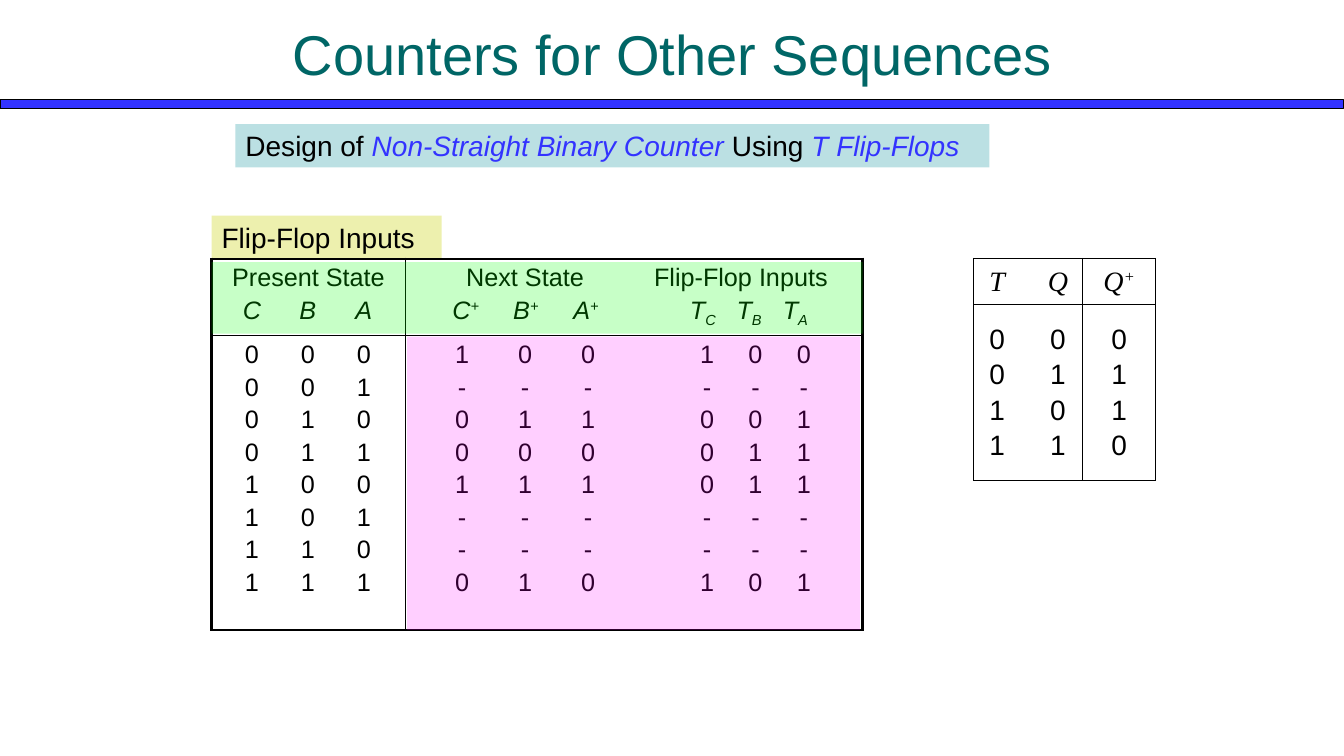
from lxml import etree
from pptx import Presentation
from pptx import util as u
from pptx.dml.color import RGBColor
from pptx.enum import shapes, text
from pptx.oxml.ns import qn

Pt = u.Pt
BLACK, BLUE, TEAL = "000000", "3333FF", "006666"
UP, DOWN = 30000, -25000

# Centres of the value columns, measured from the cell's text edge
STATE_STOPS = [21.5 + 40 * i for i in range(3)]
GROUP_STOPS = [78.4, 232.6]
NEXT_HEAD_STOPS = [36 + 43 * i for i in range(3)] + [205.5 + 33 * i for i in range(3)]
NEXT_STOPS = [33.4 + 45 * i for i in range(3)] + [208.4 + 34.6 * i for i in range(3)]
T_STOPS = [9.5, 53]

PRESENT = [f"{n:03b}" for n in range(8)]
NEXT_AND_INPUTS = ["100100", "------", "011001", "000011",
                   "111011", "------", "------", "010101"]


def color(hex_string):
    return RGBColor.from_string(hex_string)


def add_span(para, words, size, ink=BLACK, italic=False, baseline=0, font="Arial"):
    span = para.add_run()
    span.text = words
    span.font.name, span.font.size = font, Pt(size)
    span.font.italic = italic
    span.font.color.rgb = color(ink)
    if baseline:
        span._r.get_or_add_rPr().set("baseline", str(baseline))


def add_rect(page, left, top, width, height, fill, alpha=None, line=None):
    box = page.shapes.add_shape(shapes.MSO_SHAPE.RECTANGLE,
                                Pt(left), Pt(top), Pt(width), Pt(height))
    box.shadow.inherit = False
    box.fill.solid()
    box.fill.fore_color.rgb = color(fill)
    if alpha:
        tint = box.fill._xPr.find(".//" + qn("a:srgbClr"))
        etree.SubElement(tint, qn("a:alpha"), val=str(alpha * 1000))
    if line:
        box.line.color.rgb = color(line)
        box.line.width = Pt(0.75)
    else:
        box.line.fill.background()
    return box


def add_label(page, left, top, width, height, fill, spans):
    """Coloured rectangle with left-aligned (words, ink, italic) spans."""
    frame = add_rect(page, left, top, width, height, fill).text_frame
    frame.word_wrap = True
    frame.vertical_anchor = text.MSO_ANCHOR.TOP
    para = frame.paragraphs[0]
    para.alignment = text.PP_ALIGN.LEFT
    for words, ink, italic in spans:
        add_span(para, words, 20, ink, italic)


def add_title(page, words):
    box = page.shapes.add_textbox(Pt(156.24), Pt(9.36), Pt(648), Pt(57.6))
    box.text_frame.word_wrap = True
    box.text_frame.vertical_anchor = text.MSO_ANCHOR.MIDDLE
    para = box.text_frame.paragraphs[0]
    para.alignment = text.PP_ALIGN.CENTER
    add_span(para, words, 40, TEAL)


def add_borders(cell, widths):
    """Draw left, right, top and bottom borders of the given widths."""
    for side, width in zip("LRTB", widths):
        line = etree.SubElement(cell._tc.get_or_add_tcPr(), qn("a:ln" + side),
                                w=str(Pt(width)))
        fill = etree.SubElement(line, qn("a:solidFill"))
        etree.SubElement(fill, qn("a:srgbClr"), val=BLACK)


def add_grid(page, left, top, widths, heights, edge):
    """Unfilled table with 1 pt inner lines and an outer frame of width edge."""
    grid = page.shapes.add_table(len(heights), len(widths), Pt(left), Pt(top),
                                 Pt(sum(widths)), Pt(sum(heights))).table
    grid.first_row = grid.horz_banding = False
    for column, width in zip(grid.columns, widths):
        column.width = Pt(width)
    for r, height in enumerate(heights):
        grid.rows[r].height = Pt(height)
        for c in range(len(widths)):
            outer = (c == 0, c == len(widths) - 1, r == 0, r == len(heights) - 1)
            add_borders(grid.cell(r, c), [edge if side else 1 for side in outer])
            grid.cell(r, c).fill.background()
    return grid


def add_line(cell, entries, size, stops=(), **style):
    """Add a paragraph; each entry is (words, mark, baseline), one per tab stop."""
    frame = cell.text_frame
    para = frame.paragraphs[0]
    if para.runs:
        para = frame.add_paragraph()
    para.space_before = Pt(3.1)
    para.alignment = text.PP_ALIGN.LEFT if stops else text.PP_ALIGN.CENTER
    if stops:
        tabs = etree.SubElement(para._p.get_or_add_pPr(), qn("a:tabLst"))
        for stop in stops:
            etree.SubElement(tabs, qn("a:tab"), pos=str(Pt(stop)), algn="ctr")
    for words, mark, baseline in entries:
        add_span(para, ("\t" if stops else "") + words, size, **style)
        if mark:
            add_span(para, mark, size, baseline=baseline, **style)


def plain(words):
    return [(word, "", 0) for word in words]


def add_state_table(page):
    grid = add_grid(page, 151.2, 185.04, [138.24, 326.88], [54.72, 210.24], 2.25)
    # Headings
    add_line(grid.cell(0, 0), plain(["Present State"]), 18)
    add_line(grid.cell(0, 0), plain("CBA"), 18, STATE_STOPS, italic=True)
    add_line(grid.cell(0, 1), plain(["Next State", "Flip-Flop Inputs"]), 18, GROUP_STOPS)
    symbols = [(name, "+", UP) for name in "CBA"] + [("T", name, DOWN) for name in "CBA"]
    add_line(grid.cell(0, 1), symbols, 18, NEXT_HEAD_STOPS, italic=True)
    # Values
    for present, following in zip(PRESENT, NEXT_AND_INPUTS):
        add_line(grid.cell(1, 0), plain(present), 18, STATE_STOPS)
        add_line(grid.cell(1, 1), plain(following), 18, NEXT_STOPS)


def add_t_table(page):
    grid = add_grid(page, 695.52, 184.6, [77.76, 52.2], [33.12, 125.6], 1)
    for row in grid.rows:
        for cell in row.cells:
            cell.vertical_anchor = text.MSO_ANCHOR.MIDDLE
    serif = {"font": "Times New Roman", "italic": True}
    add_line(grid.cell(0, 0), plain("TQ"), 20, T_STOPS, **serif)
    add_line(grid.cell(0, 1), [("Q", "+", UP)], 20, **serif)
    for t in (0, 1):
        for q in (0, 1):
            add_line(grid.cell(1, 0), plain(f"{t}{q}"), 20, T_STOPS)
            add_line(grid.cell(1, 1), plain(str(t ^ q)), 20)


def main():
    deck = Presentation()
    deck.slide_width, deck.slide_height = Pt(960), Pt(540)
    page = deck.slides.add_slide(deck.slide_layouts[6])

    # Rule below the title and the two labels
    add_rect(page, 0, 71.3, 960, 6, BLUE, line=BLACK)
    add_label(page, 168.2, 88.6, 538.5, 31, "BBE0E3", [
        ("Design of ", BLACK, False), ("Non-Straight Binary Counter", BLUE, True),
        (" Using ", BLACK, False), ("T Flip-Flops", BLUE, True)])
    add_label(page, 151.2, 154.1, 164.2, 31, "EDF0AE",
              [("Flip-Flop Inputs", BLACK, False)])

    # State table under its two tinted areas
    add_state_table(page)
    add_rect(page, 151.2, 187.2, 465.1, 51.1, "00FF00", alpha=22)
    add_rect(page, 290.9, 240.5, 323.3, 209.5, "FF00FF", alpha=19)

    add_title(page, "Counters for Other Sequences")
    add_t_table(page)
    deck.save("out.pptx")


if __name__ == "__main__":
    main()
